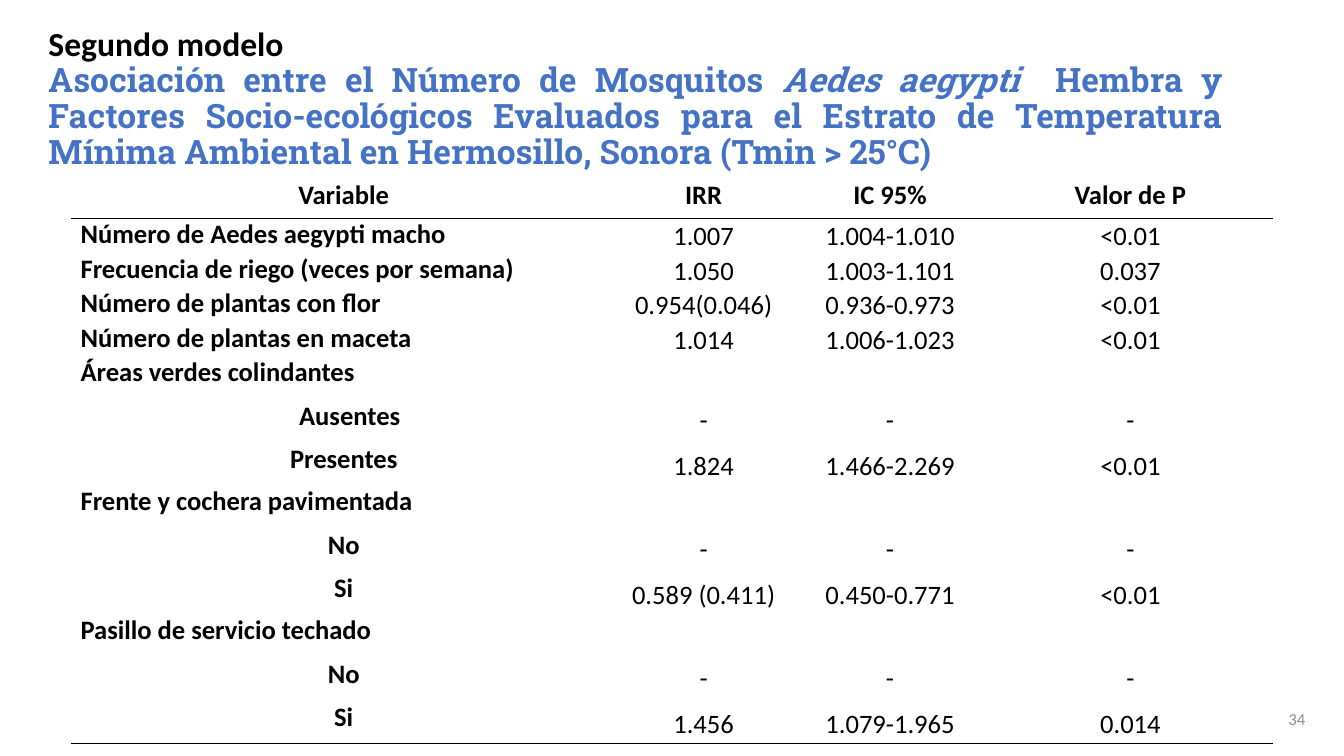
"""Build the slide with the regression table of the second mosquito model."""
import dataclasses
import typing

import pptx
import pptx.dml.color
import pptx.enum.text
import pptx.oxml
import pptx.oxml.ns
import pptx.util

Pt = pptx.util.Pt
Align = pptx.enum.text.PP_ALIGN
Anchor = pptx.enum.text.MSO_ANCHOR

COLORS = {"text": "000000", "title": "4472C4", "number": "8C8C8C"}
BODY_FONT = "Calibri"
TITLE_FONT = "Roboto Slab"
TABLE_SIZE = 19
SPACE_AFTER = 8
VALUE_SPACING = 1.07
GROUP_VALUES_TOP = 32.8
COLUMN_WIDTHS = (388.8, 125.3, 141.1, 202.3)
HEADERS = ("Variable", "IRR", "IC 95%", "Valor de P")
HEADER_HEIGHT, SINGLE_HEIGHT, GROUP_HEIGHT = 31.7, 24.7, 92.2


@dataclasses.dataclass(frozen=True)
class Factor:
    """A table row: one variable, or a variable with a reference and a compared level."""

    name: str
    values: tuple[str, str, str]
    levels: tuple[str, ...] = ()
    first_level_indent: float = 0

    @property
    def height(self) -> float:
        """Return the row height in points."""
        return GROUP_HEIGHT if self.levels else SINGLE_HEIGHT


FACTORS = (
    Factor("Número de Aedes aegypti macho", ("1.007", "1.004-1.010", "<0.01")),
    Factor("Frecuencia de riego (veces por semana)", ("1.050", "1.003-1.101", "0.037")),
    Factor("Número de plantas con flor", ("0.954(0.046)", "0.936-0.973", "<0.01")),
    Factor("Número de plantas en maceta", ("1.014", "1.006-1.023", "<0.01")),
    Factor("Áreas verdes colindantes", ("1.824", "1.466-2.269", "<0.01"),
           ("Ausentes", "Presentes"), 8.6),
    Factor("Frente y cochera pavimentada", ("0.589 (0.411)", "0.450-0.771", "<0.01"), ("No", "Si")),
    Factor("Pasillo de servicio techado", ("1.456", "1.079-1.965", "0.014"), ("No", "Si")),
)


def style_paragraph(paragraph: typing.Any, size: float, color: str, align: Align,
                    bold: bool = False, font_name: str = BODY_FONT) -> None:
    """Set the font and alignment of a whole paragraph."""
    paragraph.alignment = align
    font = paragraph.font
    font.name, font.size, font.bold = font_name, Pt(size), bold
    font.color.rgb = pptx.dml.color.RGBColor.from_string(COLORS[color])


def set_margins(target: typing.Any, side: float, vertical: float) -> None:
    """Set the inner margins of a cell or text frame."""
    target.margin_left = target.margin_right = Pt(side)
    target.margin_top = target.margin_bottom = Pt(vertical)


def write_cell(cell: typing.Any, lines: typing.Sequence[str], bold: bool) -> list[typing.Any]:
    """Write centred lines into an unfilled cell and return its paragraphs."""
    cell.fill.background()
    cell.vertical_anchor = Anchor.TOP
    cell.text_frame.text = "\n".join(lines)
    paragraphs = list(cell.text_frame.paragraphs)
    for paragraph in paragraphs:
        style_paragraph(paragraph, TABLE_SIZE, "text", Align.CENTER, bold)
    return paragraphs


def add_border(cell: typing.Any, side: str) -> None:
    """Draw a one-point line on the top (T) or bottom (B) of a cell."""
    line = pptx.oxml.parse_xml(
        f'<a:ln{side} {pptx.oxml.ns.nsdecls("a")} w="{Pt(1)}"><a:solidFill>'
        f'<a:srgbClr val="{COLORS["text"]}"/></a:solidFill></a:ln{side}>')
    cell._tc.get_or_add_tcPr().insert(0, line)


def write_factor(cells: typing.Sequence[typing.Any], factor: Factor) -> None:
    """Fill one table row with a factor's labels and values."""
    label, *value_cells = cells
    labels = write_cell(label, (factor.name, *factor.levels), True)
    set_margins(label, 6.5, 0)
    labels[0].alignment = Align.LEFT
    if factor.first_level_indent:
        labels[1]._p.get_or_add_pPr().set("marL", str(Pt(factor.first_level_indent)))
    for paragraph in labels:
        paragraph.space_after = Pt(SPACE_AFTER)
    for cell, value in zip(value_cells, factor.values):
        lines = ("-", value) if factor.levels else (value,)
        set_margins(cell, 5.8, 0)
        if factor.levels:
            cell.margin_top = Pt(GROUP_VALUES_TOP)
        for paragraph in write_cell(cell, lines, False):
            paragraph.line_spacing = VALUE_SPACING
            paragraph.space_after = Pt(SPACE_AFTER)


def add_factor_table(slide: typing.Any) -> None:
    """Add the table of factors with its three-line look."""
    heights = (HEADER_HEIGHT, *(factor.height for factor in FACTORS))
    table = slide.shapes.add_table(
        len(heights), len(HEADERS), Pt(51.1), Pt(123.1),
        Pt(sum(COLUMN_WIDTHS)), Pt(sum(heights))).table
    table.first_row = table.horz_banding = False
    for column, width in zip(table.columns, COLUMN_WIDTHS):
        column.width = Pt(width)
    for row, height in zip(table.rows, heights):
        row.height = Pt(height)
    rows = [list(row.cells) for row in table.rows]
    for cell, header in zip(rows[0], HEADERS):
        write_cell(cell, (header,), True)
        set_margins(cell, 9.4, 5)
    for cells, factor in zip(rows[1:], FACTORS):
        write_factor(cells, factor)
    for cells, side in ((rows[0], "B"), (rows[1], "T"), (rows[-1], "B")):
        for cell in cells:
            add_border(cell, side)


def write_title(title: typing.Any) -> None:
    """Place the title placeholder and write its two paragraphs."""
    title.left, title.top, title.width, title.height = Pt(25.2), Pt(59), Pt(857.5), Pt(73.4)
    frame = title.text_frame
    frame.auto_size = pptx.enum.text.MSO_AUTO_SIZE.NONE
    frame.word_wrap = True
    frame.vertical_anchor = Anchor.BOTTOM
    set_margins(frame, 9.4, 9.4)
    heading, subject = frame.paragraphs[0], frame.add_paragraph()
    heading.text = "Segundo modelo"
    style_paragraph(heading, 24, "text", Align.JUSTIFY, True)
    style_paragraph(subject, 24, "title", Align.JUSTIFY, True, TITLE_FONT)
    for text, italic in (
        ("Asociación entre el Número de Mosquitos ", False),
        ("Aedes aegypti ", True),
        (" Hembra y Factores Socio-ecológicos Evaluados para el Estrato de "
         "Temperatura Mínima Ambiental en Hermosillo, Sonora (Tmin > 25°C)", False),
    ):
        run = subject.add_run()
        run.text = text
        run.font.italic = italic
    for paragraph in frame.paragraphs:
        paragraph.line_spacing = 0.9
        paragraph.space_before = Pt(0)


def add_slide_number(slide: typing.Any, number: str) -> None:
    """Add the slide number at the lower right."""
    frame = slide.shapes.add_textbox(Pt(882), Pt(499), Pt(57.6), Pt(41)).text_frame
    frame.word_wrap = True
    set_margins(frame, 7.2, 7.2)
    frame.text = number
    style_paragraph(frame.paragraphs[0], 12, "number", Align.RIGHT)


def main() -> None:
    """Build and save the presentation."""
    presentation = pptx.Presentation()
    presentation.slide_width, presentation.slide_height = Pt(960), Pt(540)
    slide = presentation.slides.add_slide(presentation.slide_layouts[5])
    add_slide_number(slide, "34")
    write_title(slide.shapes.title)
    add_factor_table(slide)
    presentation.save("out.pptx")


if __name__ == "__main__":
    main()
